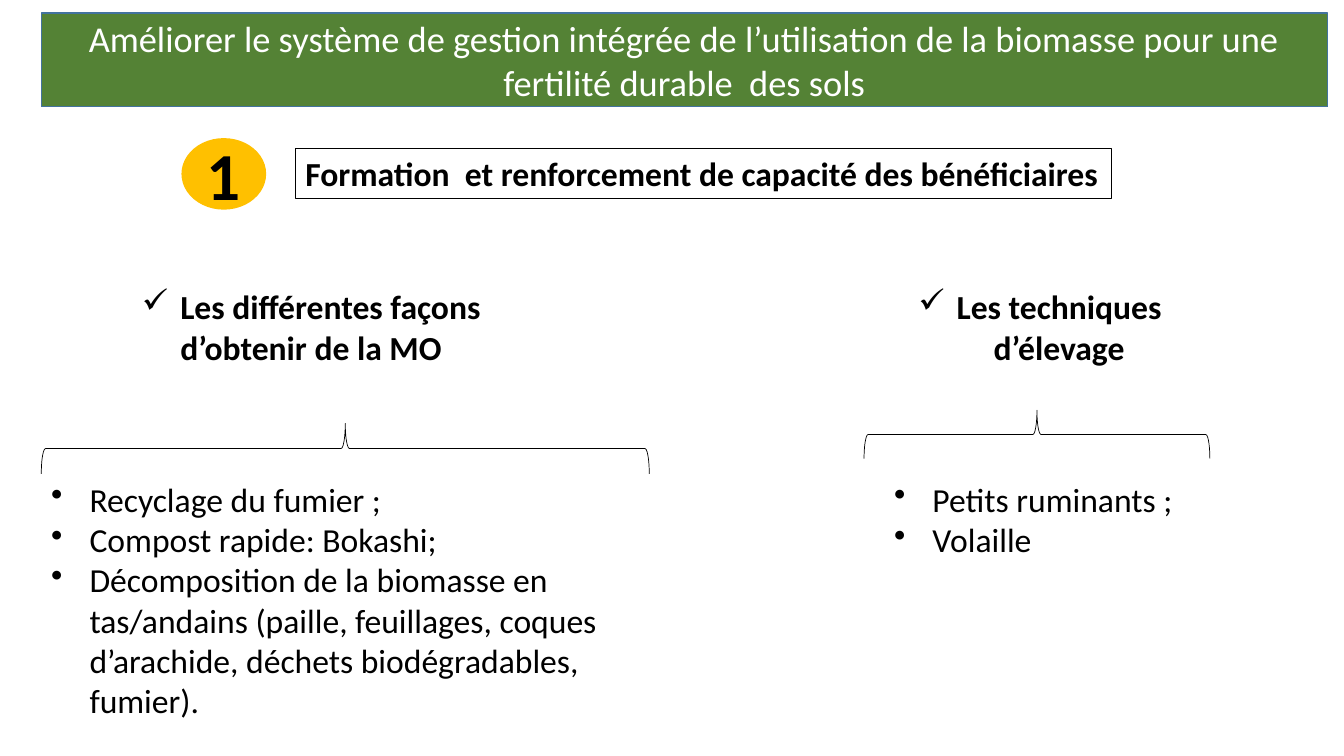
from lxml import etree
from pptx import Presentation
from pptx.dml.color import RGBColor
from pptx.enum import shapes, text
from pptx.oxml.ns import qn
from pptx.util import Inches, Pt

# Content: boxes are (left, top, width, height) in inches
TITLE = ("Améliorer le système de gestion intégrée de l’utilisation de la biomasse "
         "pour une fertilité durable  des sols")
TITLE_BOX = (0.41, 0.13, 12.76, 0.93)
STEP, STEP_BOX = "1", (1.8, 1.37, 0.84, 0.71)
TOPIC = "Formation  et renforcement de capacité des bénéficiaires"
TOPIC_BOX = (2.93, 1.47, 8.09, 0.5)
BRANCHES = [
    {
        "heading": "Les différentes façons d’obtenir de la MO",
        "heading_box": (1.31, 2.79, 3.96, 0.91),
        "heading_align": "left",
        "brace_box": (0.41, 4.2, 6.03, 0.5),
        "items": [
            "Recyclage du fumier ;",
            "Compost rapide: Bokashi;",
            "Décomposition de la biomasse en tas/andains (paille, feuillages, "
            "coques d’arachide, déchets biodégradables, fumier).",
        ],
        "items_box": (0.41, 4.7, 5.84, 2.52),
    },
    {
        "heading": "Les techniques d’élevage",
        "heading_box": (8.85, 2.79, 2.93, 0.91),
        "heading_align": "center",
        "brace_box": (8.57, 4.07, 3.43, 0.48),
        "items": ["Petits ruminants ;", "Volaille"],
        "items_box": (8.77, 4.7, 3.01, 1.31),
    },
]

THEME = {
    "font": "Calibri",
    "ink": "000000", "white": "FFFFFF", "green": "548235", "blue": "43739E", "amber": "FFC000",
    "title": 26, "body": 24, "step": 48,
    "indent": 0.38,
}
ALIGN = {"left": text.PP_ALIGN.LEFT, "center": text.PP_ALIGN.CENTER}

prs = Presentation()
prs.slide_width, prs.slide_height = Inches(13.33), Inches(7.5)
slide = prs.slides.add_slide(prs.slide_layouts[6])


def add_figure(kind, box, fill=None, line=None, width=1):
    figure = slide.shapes.add_shape(kind, *map(Inches, box))
    figure.shadow.inherit = False
    if fill:
        figure.fill.solid()
        figure.fill.fore_color.rgb = RGBColor.from_string(THEME[fill])
    else:
        figure.fill.background()
    if line:
        figure.line.color.rgb = RGBColor.from_string(THEME[line])
        figure.line.width = Pt(width)
    else:
        figure.line.fill.background()
    return figure


def add_bullet(paragraph, mark):
    props = paragraph._p.get_or_add_pPr()
    indent = Inches(THEME["indent"])
    for name, value in {"marL": indent, "indent": -indent}.items():
        props.set(name, str(value))
    etree.SubElement(props, qn("a:buChar")).set("char", mark)


def write(holder, lines, size="body", color="ink", bold=False, align="left",
          anchor=text.MSO_ANCHOR.TOP, mark=None):
    frame = holder.text_frame
    frame.word_wrap, frame.vertical_anchor = True, anchor
    for number, line in enumerate(lines):
        paragraph = frame.add_paragraph() if number else frame.paragraphs[0]
        paragraph.alignment = ALIGN[align]
        run = paragraph.add_run()
        run.text = line
        formats = {"name": THEME["font"], "size": Pt(THEME[size]), "bold": bold}
        for name, value in formats.items():
            setattr(run.font, name, value)
        run.font.color.rgb = RGBColor.from_string(THEME[color])
        if mark:
            add_bullet(paragraph, mark)


def add_label(box, lines, **formats):
    write(slide.shapes.add_textbox(*map(Inches, box)), lines, **formats)


def add_brace(box):
    # A right brace turned upwards: swap width and height around the centre
    left, top, width, height = box
    shift = (width - height) / 2
    brace = add_figure(shapes.MSO_SHAPE.RIGHT_BRACE,
                       (left + shift, top - shift, height, width), line="ink", width=0.5)
    brace.rotation = 270


# Title band
band = add_figure(shapes.MSO_SHAPE.RECTANGLE, TITLE_BOX, "green", "blue")
write(band, [TITLE], "title", "white", align="center", anchor=text.MSO_ANCHOR.MIDDLE)

# Topic with its step number
topic = add_figure(shapes.MSO_SHAPE.RECTANGLE, TOPIC_BOX, line="ink", width=0.75)
write(topic, [TOPIC], bold=True)
step = add_figure(shapes.MSO_SHAPE.OVAL, STEP_BOX, "amber")
write(step, [STEP], "step", bold=True, align="center", anchor=text.MSO_ANCHOR.MIDDLE)

# Branches: heading, brace and list
for branch in BRANCHES:
    add_label(branch["heading_box"], [branch["heading"]], bold=True,
              align=branch["heading_align"], mark="✓")
    add_brace(branch["brace_box"])
    add_label(branch["items_box"], branch["items"], mark="•")

prs.save("out.pptx")
